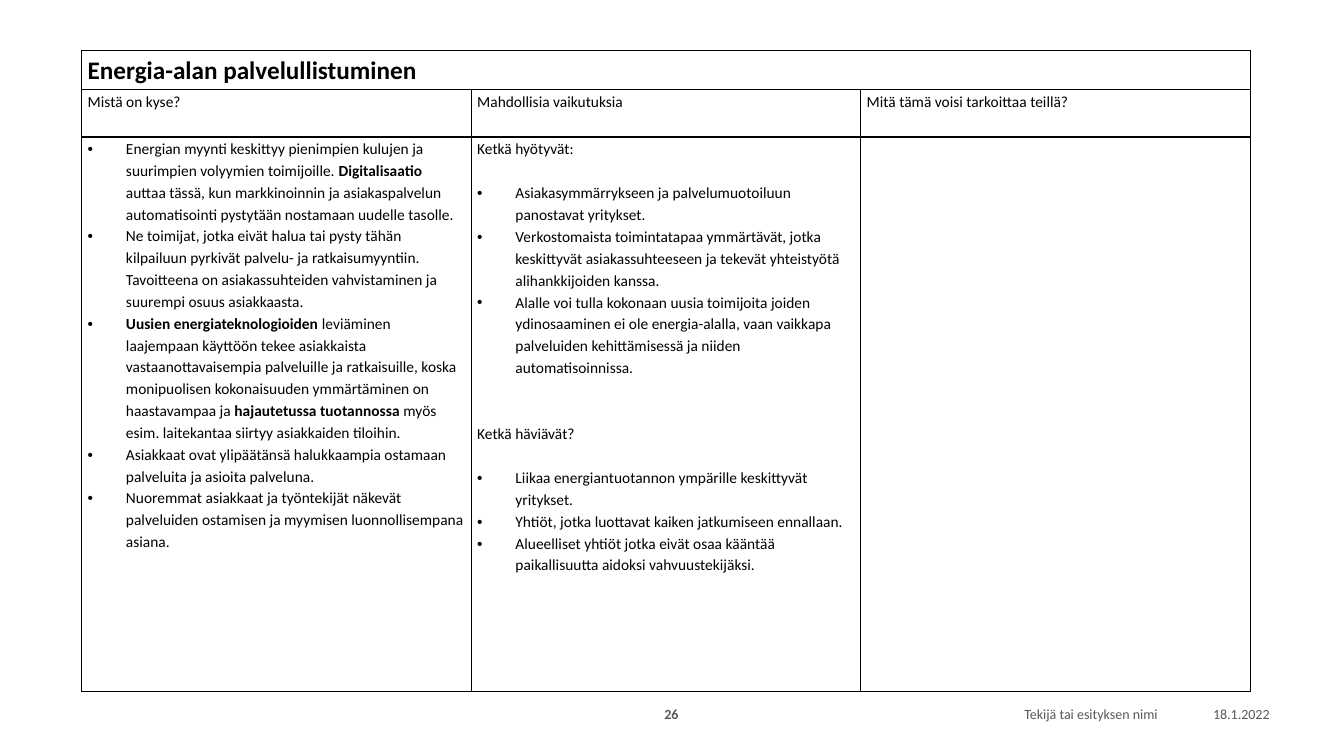
from lxml import etree
from pptx import Presentation
from pptx.dml.color import RGBColor
from pptx.enum.text import MSO_ANCHOR, PP_ALIGN
from pptx.oxml.ns import qn
from pptx.util import Inches, Pt

LEFT, CENTER, RIGHT = PP_ALIGN.LEFT, PP_ALIGN.CENTER, PP_ALIGN.RIGHT
MIDDLE = MSO_ANCHOR.MIDDLE
FONT = "Calibri"
COLORS = {"text": "000000", "border": "000000", "footer": "595959"}
BULLET_INDENT = Inches(0.38)

TITLE = "Energia-alan palvelullistuminen"
HEADINGS = ["Mistä on kyse?", "Mahdollisia vaikutuksia", "Mitä tämä voisi tarkoittaa teillä?"]
# Text between ** marks is bold.
BACKGROUND = [
    "Energian myynti keskittyy pienimpien kulujen ja suurimpien volyymien toimijoille. "
    "**Digitalisaatio** auttaa tässä, kun markkinoinnin ja asiakaspalvelun automatisointi "
    "pystytään nostamaan uudelle tasolle.",
    "Ne toimijat, jotka eivät halua tai pysty tähän kilpailuun pyrkivät palvelu- ja "
    "ratkaisumyyntiin. Tavoitteena on asiakassuhteiden vahvistaminen ja suurempi osuus asiakkaasta.",
    "**Uusien energiateknologioiden** leviäminen laajempaan käyttöön tekee asiakkaista "
    "vastaanottavaisempia palveluille ja ratkaisuille, koska monipuolisen kokonaisuuden "
    "ymmärtäminen on haastavampaa ja **hajautetussa tuotannossa** myös esim. laitekantaa "
    "siirtyy asiakkaiden tiloihin.",
    "Asiakkaat ovat ylipäätänsä halukkaampia ostamaan palveluita ja asioita palveluna.",
    "Nuoremmat asiakkaat ja työntekijät näkevät palveluiden ostamisen ja myymisen "
    "luonnollisempana asiana.",
]
WINNERS = [
    "Asiakasymmärrykseen ja palvelumuotoiluun panostavat yritykset.",
    "Verkostomaista toimintatapaa ymmärtävät, jotka keskittyvät asiakassuhteeseen ja "
    "tekevät yhteistyötä alihankkijoiden kanssa.",
    "Alalle voi tulla kokonaan uusia toimijoita joiden ydinosaaminen ei ole energia-alalla, "
    "vaan vaikkapa palveluiden kehittämisessä ja niiden automatisoinnissa.",
]
LOSERS = [
    "Liikaa energiantuotannon ympärille keskittyvät yritykset.",
    "Yhtiöt, jotka luottavat kaiken jatkumiseen ennallaan.",
    "Alueelliset yhtiöt jotka eivät osaa kääntää paikallisuutta aidoksi vahvuustekijäksi.",
]


def add_text(tf, text, size=11, color="text", bold=False, align=LEFT,
             bullet=False, before=0, after=0, line=1.0):
    """Fill the first paragraph if it is empty, otherwise append one."""
    p = tf.paragraphs[0]
    if p.runs:
        p = tf.add_paragraph()
        p.space_before = Pt(before)
    p.alignment, p.line_spacing, p.space_after = align, line, Pt(after)
    if bullet:
        pPr = p._p.get_or_add_pPr()
        pPr.set("marL", str(BULLET_INDENT))
        pPr.set("indent", str(-BULLET_INDENT))
        etree.SubElement(pPr, qn("a:buFont"), typeface="Arial")
        etree.SubElement(pPr, qn("a:buChar"), char="•")
    for i, part in enumerate(text.split("**")):
        if part:
            r = p.add_run()
            r.text = part
            r.font.name, r.font.size = FONT, Pt(size)
            r.font.bold = bold or i % 2 == 1
            r.font.color.rgb = RGBColor.from_string(COLORS[color])


def add_bullets(tf, items, before=0):
    """Add a list; before is the gap above its first item."""
    for i, item in enumerate(items):
        add_text(tf, item, bullet=True, line=1.15, before=0 if i else before)


def format_cell(cell):
    """Set insets, an empty fill and thin borders on all sides."""
    cell.margin_left = cell.margin_right = Inches(0.06)
    cell.margin_top = cell.margin_bottom = 0
    cell.fill.background()
    tcPr = cell._tc.get_or_add_tcPr()
    for i, side in enumerate(("lnL", "lnR", "lnT", "lnB")):
        ln = etree.Element(qn(f"a:{side}"), w=str(Pt(1)))
        fill = etree.SubElement(ln, qn("a:solidFill"))
        etree.SubElement(fill, qn("a:srgbClr"), val=COLORS["border"])
        tcPr.insert(i, ln)


def add_trend_table(slide, left, top, width, row_heights):
    height = sum(row_heights)
    table = slide.shapes.add_table(len(row_heights), len(HEADINGS), Inches(left), Inches(top),
                                   Inches(width), Inches(height)).table
    table.first_row = table.horz_banding = False
    for row, row_height in zip(table.rows, row_heights):
        row.height = Inches(row_height)
    for cell in table.iter_cells():
        format_cell(cell)
    table.cell(0, 0).merge(table.cell(0, len(HEADINGS) - 1))

    add_text(table.cell(0, 0).text_frame, TITLE, size=18, bold=True, line=1.15)
    for col, heading in enumerate(HEADINGS):
        add_text(table.cell(1, col).text_frame, heading, line=1.15)
    add_bullets(table.cell(2, 0).text_frame, BACKGROUND)
    tf = table.cell(2, 1).text_frame
    add_text(tf, "Ketkä hyötyvät:", line=1.15, after=10)
    add_bullets(tf, WINNERS, before=6)
    add_text(tf, "Ketkä häviävät?", line=1.15, before=31.5, after=10)
    add_bullets(tf, LOSERS, before=6)


def add_footer(slide, top, height):
    fields = [
        (6.36, 0.6, "26", CENTER, True),
        (7.41, 4.17, "Tekijä tai esityksen nimi", RIGHT, False),
        (11.58, 1.11, "18.1.2022", RIGHT, False),
    ]
    for left, width, text, align, bold in fields:
        tf = slide.shapes.add_textbox(Inches(left), Inches(top),
                                      Inches(width), Inches(height)).text_frame
        tf.word_wrap = True
        tf.vertical_anchor = MIDDLE
        add_text(tf, text, size=10, color="footer", bold=bold, align=align)


def main():
    prs = Presentation()
    prs.slide_width, prs.slide_height = Inches(13.33), Inches(7.5)
    slide = prs.slides.add_slide(prs.slide_layouts[6])
    add_footer(slide, top=6.95, height=0.27)
    add_trend_table(slide, left=0.81, top=0.5, width=11.59, row_heights=[0.39, 0.47, 5.5])
    prs.save("out.pptx")


if __name__ == "__main__":
    main()
